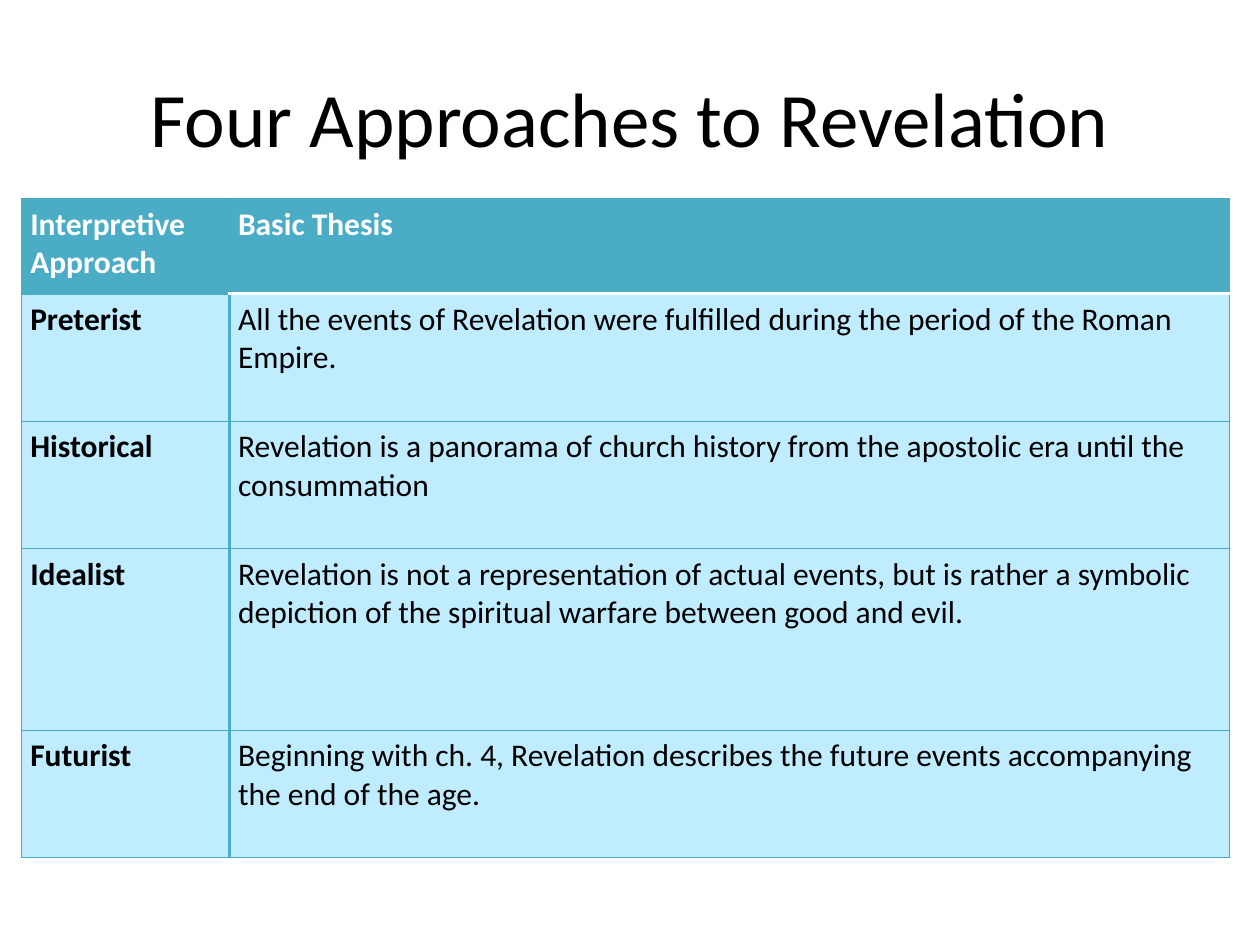
from lxml.etree import SubElement as Sub
from pptx import Presentation
from pptx.dml.color import RGBColor
from pptx.enum.text import MSO_ANCHOR as Anchor, PP_ALIGN as Align
from pptx.oxml.ns import qn
from pptx.util import Cm, Pt

ROWS = [
    ("Interpretive Approach", "Basic Thesis"),
    ("Preterist", "All the events of Revelation were fulfilled during "
                  "the period of the Roman Empire."),
    ("Historical", "Revelation is a panorama of church history from the "
                   "apostolic era until the consummation"),
    ("Idealist", "Revelation is not a representation of actual events, but is "
                 "rather a symbolic depiction of the spiritual warfare "
                 "between good and evil."),
    ("Futurist", "Beginning with ch. 4, Revelation describes the future "
                 "events accompanying the end of the age."),
]
WIDTHS = (4.19, 20.17)
HEIGHTS = (1.91, 2.57, 2.57, 3.66, 2.57)


def color(code):
    return RGBColor.from_string(code)


class Deck:
    font = "Calibri"
    dark, light = "000000", "FFFFFF"
    head, body, line = "4BACC6", "BFECFF", "46AAC5"

    def __init__(self):
        self.file = Presentation()
        self.file.slide_width, self.file.slide_height = Cm(25.4), Cm(19.05)
        self.slide = self.file.slides.add_slide(self.file.slide_layouts[5])

    def style(self, para, size, ink, bold=False):
        font = para.font
        font.name, font.size, font.bold = self.font, Pt(size), bold
        font.color.rgb = color(ink)

    def title(self, text, left, top, width, height):
        box = self.slide.shapes.title
        box.left, box.top = Cm(left), Cm(top)
        box.width, box.height = Cm(width), Cm(height)
        box.text_frame.text = text
        box.text_frame.vertical_anchor = Anchor.MIDDLE
        para = box.text_frame.paragraphs[0]
        para.alignment = Align.CENTER
        self.style(para, 44, self.dark)

    def edge(self, cell, side, ink, width):
        line = Sub(cell._tc.get_or_add_tcPr(), qn("a:ln" + side), w=str(Pt(width)))
        Sub(Sub(line, qn("a:solidFill")), qn("a:srgbClr"), val=ink)

    def cell(self, cell, text, row, col):
        top = row == 0
        cell.text = text
        cell.margin_left = cell.margin_right = Cm(0.18)
        cell.margin_top = cell.margin_bottom = Cm(0.13)
        cell.vertical_anchor = Anchor.TOP
        self.style(cell.text_frame.paragraphs[0], 18,
                   self.light if top else self.dark, top or col == 0)

        # Thin outer lines, a thick column divider and a thick header rule
        thin, thick = (self.line, 0.75), (self.head, 2)
        rule = (self.light if col else self.head, 2)
        self.edge(cell, "L", *(thick if col else thin))
        self.edge(cell, "R", *(thin if col else thick))
        self.edge(cell, "T", *(rule if row == 1 else thin))
        self.edge(cell, "B", *(rule if top else thin))
        cell.fill.solid()
        cell.fill.fore_color.rgb = color(self.head if top else self.body)

    def table(self, rows, left, top, widths, heights):
        grid = self.slide.shapes.add_table(
            len(rows), len(widths), Cm(left), Cm(top),
            Cm(sum(widths)), Cm(sum(heights))).table
        for col, width in zip(grid.columns, widths):
            col.width = Cm(width)
        for row, height in zip(grid.rows, heights):
            row.height = Cm(height)
        for r, texts in enumerate(rows):
            for c, text in enumerate(texts):
                self.cell(grid.cell(r, c), text, r, c)


def main():
    deck = Deck()
    # Heading
    deck.title("Four Approaches to Revelation", 1.27, 0.76, 22.86, 3.18)
    # Approaches and their theses
    deck.table(ROWS, 0.43, 4.01, WIDTHS, HEIGHTS)
    deck.file.save("out.pptx")


if __name__ == "__main__":
    main()
